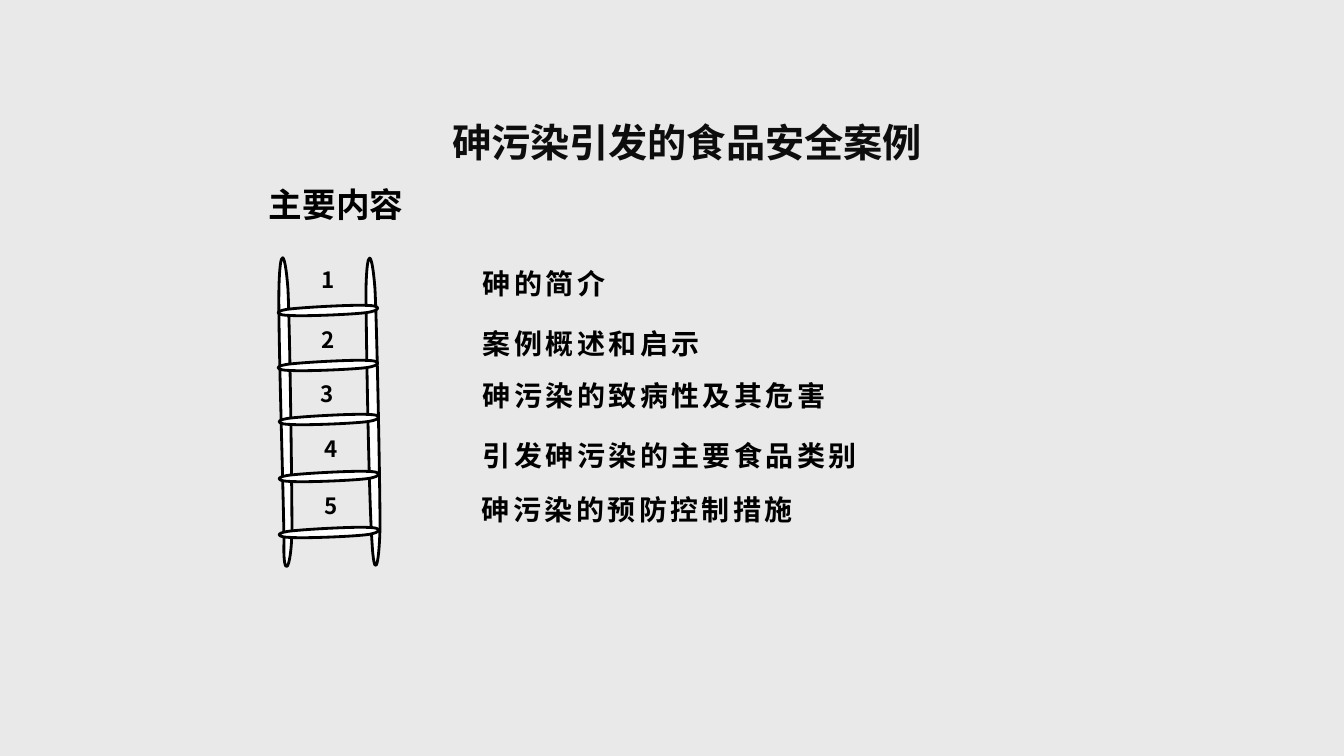
import pptx
import pptx.util
import pptx.dml.color
import pptx.enum.text
import lxml.etree
from dataclasses import dataclass

# Content: number, its position, topic, its position, rung position (px)
TITLE = "砷污染引发的食品安全案例"
SUBTITLE = "主要内容"
STEPS = [
    ("1", (312, 261), "砷的简介", (473, 261), (324, 261)),
    ("2", (312, 321), "案例概述和启示", (473, 321), (324, 316)),
    ("3", (311, 375), "砷污染的致病性及其危害", (473, 373), (325, 370)),
    ("4", (315, 430), "引发砷污染的主要食品类别", (473, 433), (325, 427)),
    ("5", (315, 487), "砷污染的预防控制措施", (472, 487), (325, 483)),
]

# Ladder outlines inside their frames: a start point, then three points per curve (px)
LEFT_RAIL = [(0, 30), (-1, 73), (5, 249), (5, 285), (4, 321), (12, 315), (13, 273),
             (13, 231), (11, 73), (9, 31), (6, -9), (1, -12), (0, 30)]
RIGHT_RAIL = [(0, 30), (0, 73), (3, 244), (6, 284), (8, 322), (13, 312), (14, 269),
              (14, 228), (11, 72), (9, 31), (6, -8), (1, -12), (0, 30)]
RUNG = [(0, 11), (-1, 24), (2, 79), (4, 92), (6, 105), (10, 102), (10, 88),
        (11, 75), (9, 24), (7, 11), (5, -2), (0, -3), (0, 11)]
RUNG_SIZE = (10, 99)


@dataclass(frozen=True)
class Theme:
    background: str = "E9E9E9"
    ink: str = "000000"
    title_ink: str = "0D0D0D"
    ladder: str = "FFFFFF"
    font: str = "Noto Sans CJK SC"
    subtitle_font: str = "Roboto"
    title_size: int = 28
    subtitle_size: int = 24
    topic_size: int = 20
    number_size: int = 16
    topic_tracking: int = 240
    outline: int = 2


THEME = Theme()
EMU_PER_PX = 914400 / 100.8


def px(length):
    return pptx.util.Emu(round(length * EMU_PER_PX))


def rgb(value):
    return pptx.dml.color.RGBColor.from_string(value)


def add_element(parent, tag, **attributes):
    return lxml.etree.SubElement(parent, pptx.oxml.ns.qn(tag), attributes)


def write(box, text, size, color=THEME.ink, font=THEME.font, tracking=0, wrap=True):
    """Fill a box with one bold line, centred vertically."""
    frame = box.text_frame
    frame.auto_size = pptx.enum.text.MSO_AUTO_SIZE.NONE
    frame.word_wrap = wrap
    frame.vertical_anchor = pptx.enum.text.MSO_ANCHOR.MIDDLE
    line = frame.paragraphs[0]
    line.alignment = pptx.enum.text.PP_ALIGN.LEFT
    run = line.add_run()
    run.text = text
    run.font.size = pptx.util.Pt(size)
    run.font.bold = True
    run.font.name = font
    run.font.color.rgb = rgb(color)
    properties = run.font._element
    if tracking:
        properties.set("spc", str(tracking))
    add_element(properties, "a:ea", typeface=THEME.font)


def add_label(slide, position, size, text, points, **style):
    box = slide.shapes.add_textbox(*map(px, position + size))
    write(box, text, points, **style)


def add_ladder_part(slide, position, size, outline, rotation=0):
    """Draw a closed chain of Bezier curves in a frame."""
    width, height = size
    builder = slide.shapes.build_freeform(scale=EMU_PER_PX)
    builder.add_line_segments([(width, 0), (width, height)], close=True)
    part = builder.convert_to_shape(*map(px, position))
    part.rotation = rotation

    # Put the curves in the frame's path
    curves = next(part._element.iter(pptx.oxml.ns.qn("a:path")))
    for segment in list(curves):
        curves.remove(segment)
    commands = [("a:moveTo", outline[:1])]
    commands += [("a:cubicBezTo", outline[i:i + 3]) for i in range(1, len(outline), 3)]
    for tag, points in commands:
        command = add_element(curves, tag)
        for x, y in points:
            add_element(command, "a:pt", x=str(x), y=str(y))
    add_element(curves, "a:close")

    part.shadow.inherit = False
    part.fill.solid()
    part.fill.fore_color.rgb = rgb(THEME.ladder)
    part.line.color.rgb = rgb(THEME.ink)
    part.line.width = pptx.util.Pt(THEME.outline)


def main():
    deck = pptx.Presentation()
    deck.slide_width, deck.slide_height = px(1344), px(756)
    slide = deck.slides.add_slide(deck.slide_layouts[5])
    slide.background.fill.solid()
    slide.background.fill.fore_color.rgb = rgb(THEME.background)

    # Ladder with its numbers
    add_ladder_part(slide, (279, 258), (13, 308), LEFT_RAIL)
    add_ladder_part(slide, (366, 258), (14, 308), RIGHT_RAIL)
    for number, number_at, _, _, rung_at in reversed(STEPS):
        add_ladder_part(slide, rung_at, RUNG_SIZE, RUNG, rotation=90)
        add_label(slide, number_at, (34, 37), number, THEME.number_size, wrap=False)

    # Topics
    for _, _, topic, topic_at, _ in STEPS:
        add_label(slide, topic_at, (722, 44), topic, THEME.topic_size,
                  tracking=THEME.topic_tracking)

    # Headings
    title = slide.shapes.title
    title.left, title.top, title.width, title.height = map(px, (442, 113, 500, 57))
    write(title, TITLE, THEME.title_size, color=THEME.title_ink)
    add_label(slide, (259, 179), (160, 50), SUBTITLE, THEME.subtitle_size,
              font=THEME.subtitle_font)

    deck.save("out.pptx")


if __name__ == "__main__":
    main()
